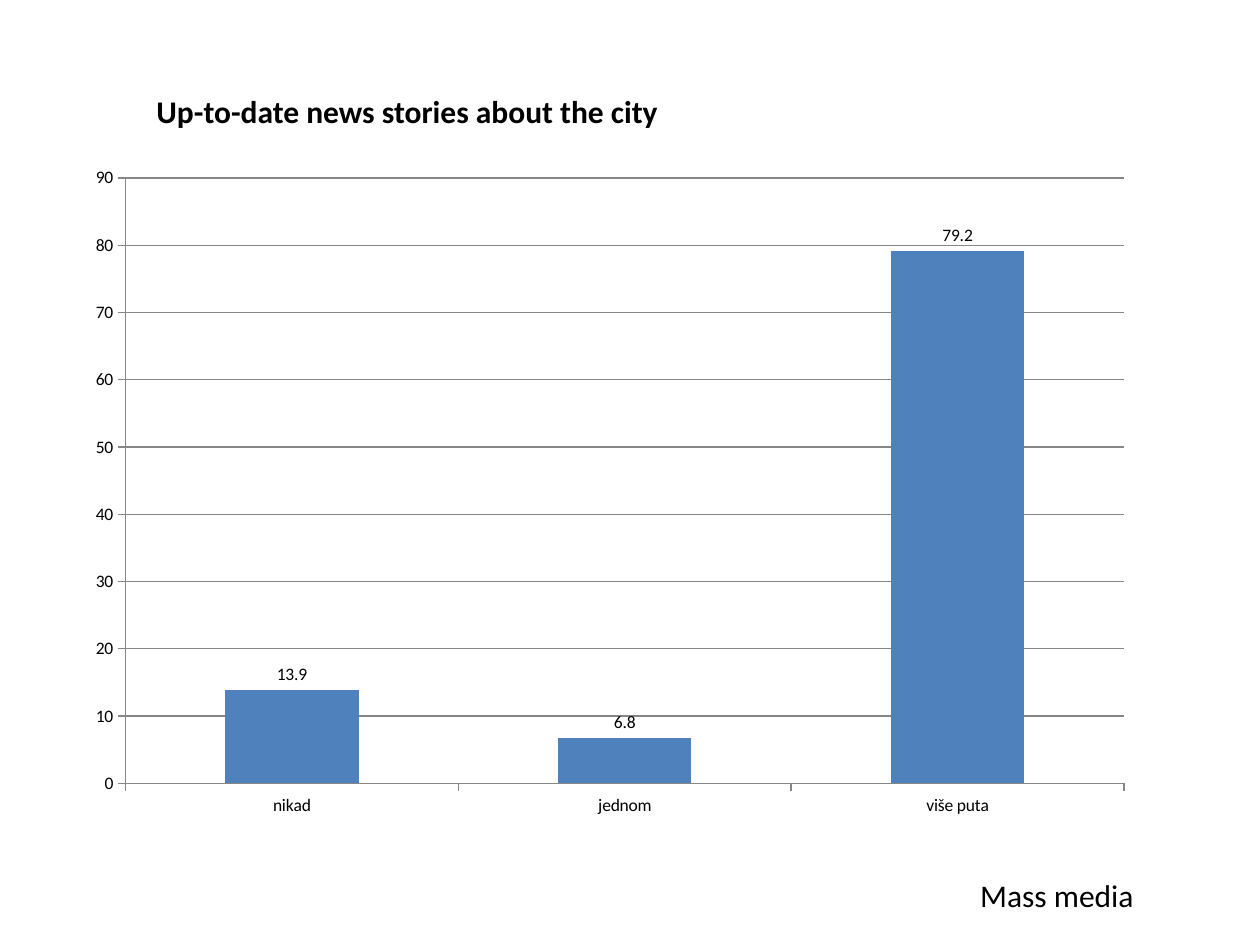
from pptx import Presentation
from pptx.chart.data import CategoryChartData
from pptx.dml.color import RGBColor
from pptx.enum.chart import XL_CHART_TYPE, XL_LABEL_POSITION, XL_TICK_MARK
from pptx.enum.text import MSO_ANCHOR, MSO_AUTO_SIZE, PP_ALIGN
from pptx.util import Cm, Pt

TITLE = "Up-to-date news stories about the city"
TOPIC = "Mass media"
SHARES = {"nikad": 13.9, "jednom": 6.8, "više puta": 79.2}

FONT = "Calibri"
BLACK, BLUE, GRAY = "000000", "4F81BD", "868686"


def color(hex_string):
    return RGBColor.from_string(hex_string)


def style_font(font, size, bold=False):
    font.name = FONT
    font.size = Pt(size)
    font.bold = bold
    font.color.rgb = color(BLACK)


def write_text(shape, text, left, top, width, height, bold=False):
    shape.left, shape.top = Cm(left), Cm(top)
    shape.width, shape.height = Cm(width), Cm(height)
    text_frame = shape.text_frame
    text_frame.text = text
    text_frame.word_wrap = True
    text_frame.auto_size = MSO_AUTO_SIZE.SHAPE_TO_FIT_TEXT
    text_frame.vertical_anchor = MSO_ANCHOR.TOP
    paragraph = text_frame.paragraphs[0]
    paragraph.alignment = PP_ALIGN.LEFT
    style_font(paragraph.runs[0].font, 18, bold)


def style_line(line):
    line.color.rgb = color(GRAY)
    line.width = Pt(0.75)


def add_shares_chart(slide):
    chart_data = CategoryChartData()
    chart_data.categories = list(SHARES)
    chart_data.add_series("Series 1", list(SHARES.values()))
    chart = slide.shapes.add_chart(
        XL_CHART_TYPE.COLUMN_CLUSTERED,
        Cm(1.5), Cm(3.12), Cm(21.59), Cm(13.59), chart_data,
    ).chart
    chart.has_legend = False
    chart.has_title = False
    style_font(chart.font, 10)

    for axis in (chart.category_axis, chart.value_axis):
        axis.major_tick_mark = XL_TICK_MARK.OUTSIDE
        axis.minor_tick_mark = XL_TICK_MARK.NONE
        style_line(axis.format.line)
    chart.value_axis.minimum_scale = 0
    chart.value_axis.maximum_scale = 90
    chart.value_axis.major_unit = 10
    chart.value_axis.has_major_gridlines = True
    style_line(chart.value_axis.major_gridlines.format.line)

    plot = chart.plots[0]
    plot.gap_width = 150
    plot.vary_by_categories = False
    fill = plot.series[0].format.fill
    fill.solid()
    fill.fore_color.rgb = color(BLUE)
    labels = plot.series[0].data_labels
    labels.show_value = True
    labels.position = XL_LABEL_POSITION.OUTSIDE_END
    style_font(labels.font, 10)


def main():
    presentation = Presentation()
    presentation.slide_width = Cm(25.4)
    presentation.slide_height = Cm(19.05)
    slide = presentation.slides.add_slide(presentation.slide_layouts[5])
    write_text(slide.shapes.title, TITLE, 2.9, 1.73, 18.39, 1.02, bold=True)
    topic = slide.shapes.add_textbox(0, 0, 0, 0)
    write_text(topic, TOPIC, 19.51, 17.53, 5.21, 1.02)
    add_shares_chart(slide)
    presentation.save("out.pptx")


if __name__ == "__main__":
    main()
